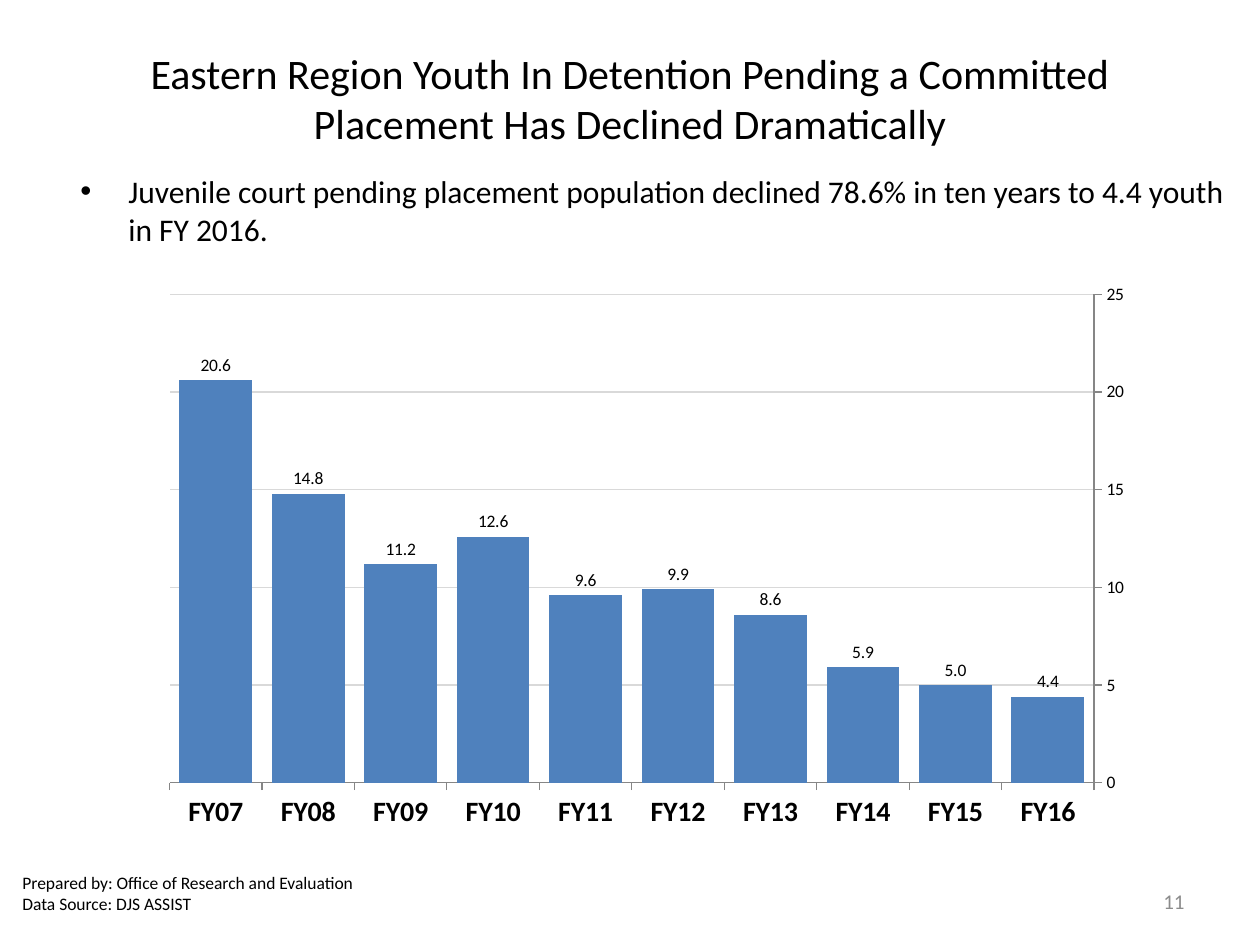
from lxml import etree
from pptx import Presentation, util as u
from pptx.chart.data import CategoryChartData
from pptx.dml.color import RGBColor
from pptx.enum import chart as ch, text
from pptx.oxml import parse_xml
from pptx.oxml.ns import nsdecls, qn

FONT = "Calibri"
BLACK, GREY, GRID, AXIS, BAR = "000000", "8C8C8C", "D9D9D9", "868686", "4F81BD"
YOUTH_BY_YEAR = {
    "FY16": 4.4, "FY15": 5.0, "FY14": 5.9, "FY13": 8.6, "FY12": 9.9,
    "FY11": 9.6, "FY10": 12.6, "FY09": 11.2, "FY08": 14.8, "FY07": 20.6,
}


def color(hex_code):
    return RGBColor.from_string(hex_code)


def style(font, size, hex_code=BLACK, bold=False):
    font.name, font.size, font.bold = FONT, u.Pt(size), bold
    font.color.rgb = color(hex_code)


def add_text(slide, box, lines, size, hex_code=BLACK, align=text.PP_ALIGN.LEFT):
    frame = slide.shapes.add_textbox(*map(u.Inches, box)).text_frame
    frame.word_wrap = True
    frame.vertical_anchor = text.MSO_ANCHOR.MIDDLE
    frame.text = "\n".join(lines)
    for paragraph in frame.paragraphs:
        paragraph.alignment = align
        style(paragraph.font, size, hex_code)
    return frame


def add_finding(slide, box, finding):
    """Bulleted statement with a hanging indent."""
    paragraph = add_text(slide, box, [finding], 18).paragraphs[0]
    properties = paragraph._p.get_or_add_pPr()
    indent = u.Inches(0.38)
    properties.set("marL", str(indent))
    properties.set("indent", str(-indent))
    etree.SubElement(properties, qn("a:buFont")).set("typeface", "Arial")
    etree.SubElement(properties, qn("a:buChar")).set("char", "•")


def set_plot_area(chart, x, y, w, h):
    """Fix the inner plot area, in shares of the chart."""
    plot_area = chart._chartSpace.chart.plotArea
    for old in plot_area.findall(qn("c:layout")):
        plot_area.remove(old)
    plot_area.insert(0, parse_xml(
        f'<c:layout {nsdecls("c")}><c:manualLayout><c:layoutTarget val="inner"/>'
        '<c:xMode val="edge"/><c:yMode val="edge"/>'
        f'<c:x val="{x}"/><c:y val="{y}"/><c:w val="{w}"/><c:h val="{h}"/>'
        '</c:manualLayout></c:layout>'))


def add_youth_chart(slide, box):
    data = CategoryChartData()
    data.categories = list(YOUTH_BY_YEAR)
    data.add_series("Series 1", list(YOUTH_BY_YEAR.values()))
    chart = slide.shapes.add_chart(
        ch.XL_CHART_TYPE.COLUMN_CLUSTERED, *map(u.Inches, box), data).chart
    chart.has_legend = chart.has_title = False
    style(chart.font, 10)
    set_plot_area(chart, 0.073, 0.055, 0.9, 0.83)

    plot = chart.plots[0]
    plot.gap_width = 27
    plot.vary_by_categories = False
    bars = plot.series[0].format.fill
    bars.solid()
    bars.fore_color.rgb = color(BAR)
    plot.has_data_labels = True
    labels = plot.data_labels
    labels.show_value = True
    labels.number_format, labels.number_format_is_linked = "0.0", False
    labels.position = ch.XL_LABEL_POSITION.OUTSIDE_END
    style(labels.font, 10)

    years, youth = chart.category_axis, chart.value_axis
    for axis, size, bold in ((years, 16, True), (youth, 10, False)):
        axis.major_tick_mark = ch.XL_TICK_MARK.OUTSIDE
        axis.format.line.color.rgb = color(AXIS)
        style(axis.tick_labels.font, size, bold=bold)
    # Data runs newest first: flip it and keep the value axis on the left.
    years.reverse_order = True
    years.crosses = ch.XL_AXIS_CROSSES.MAXIMUM
    youth.minimum_scale, youth.maximum_scale, youth.major_unit = 0, 25, 5
    youth.tick_labels.number_format = "0"
    youth.tick_labels.number_format_is_linked = False
    youth.has_major_gridlines = True
    gridline = youth.major_gridlines.format.line
    gridline.color.rgb, gridline.width = color(GRID), u.Pt(0.75)


def add_footer(slide, source_box, number_box):
    add_text(slide, source_box,
             ["Prepared by: Office of Research and Evaluation",
              "Data Source:\u00a0DJS ASSIST"], 10)
    add_text(slide, number_box, ["11"], 12, GREY, text.PP_ALIGN.RIGHT)


def main():
    deck = Presentation()
    deck.slide_width, deck.slide_height = u.Inches(10), u.Inches(7.5)
    slide = deck.slides.add_slide(deck.slide_layouts[6])
    add_text(slide, (0.5, 0.3, 9, 0.95),
             ["Eastern Region Youth In Detention Pending a Committed "
              "Placement Has Declined Dramatically"],
             24, align=text.PP_ALIGN.CENTER)
    add_finding(slide, (0.54, 1.08, 9.29, 1.17),
                "Juvenile court pending placement population declined 78.6% "
                "in ten years to 4.4 youth in FY 2016.")
    add_youth_chart(slide, (0.75, 2.08, 8.17, 4.67))
    add_footer(slide, (0.08, 6.83, 2.92, 0.52), (7.17, 6.95, 2.33, 0.4))
    deck.save("out.pptx")


if __name__ == "__main__":
    main()
